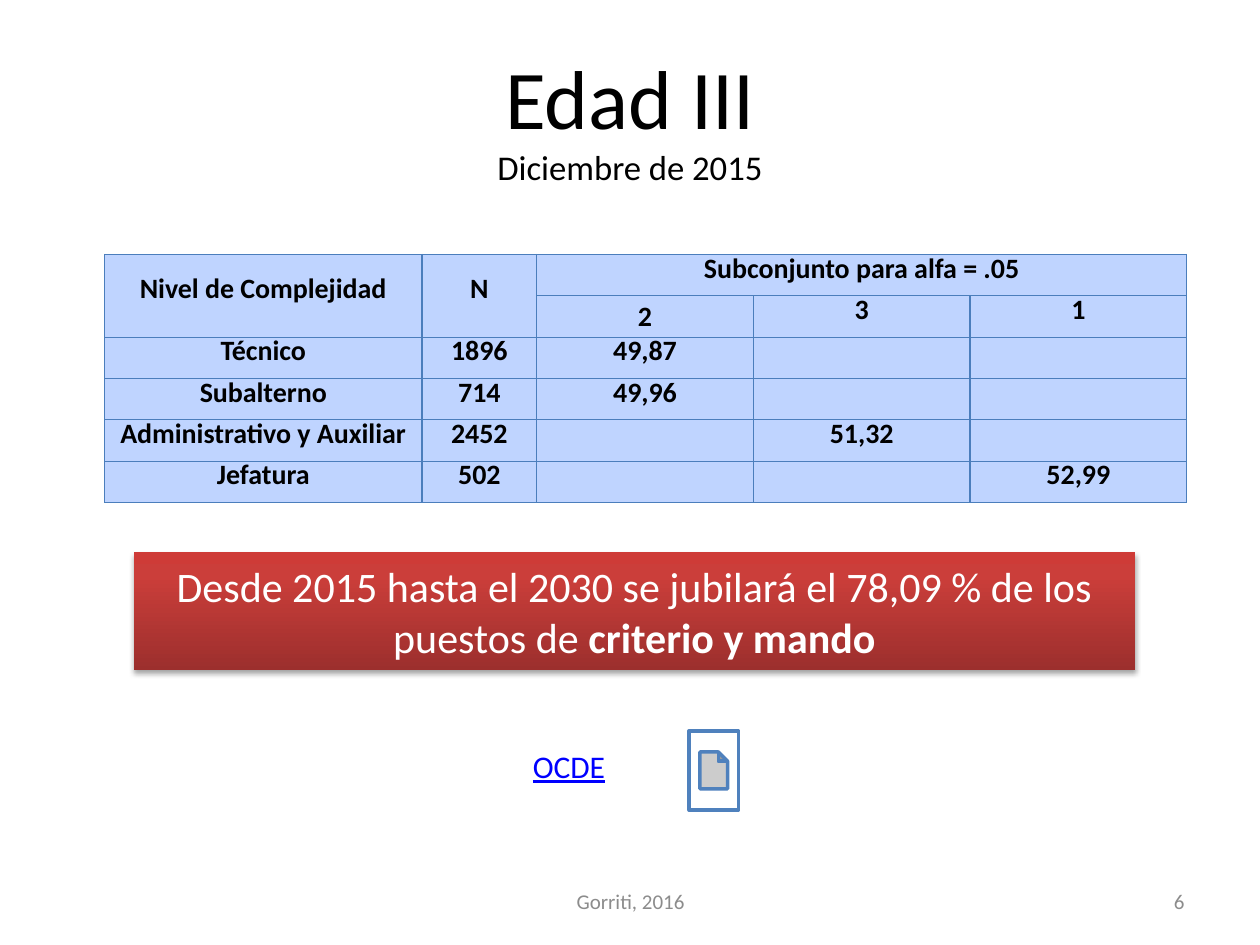
from dataclasses import dataclass

import pptx
import pptx.dml.color
import pptx.enum.shapes
import pptx.enum.text
import pptx.oxml
import pptx.oxml.ns
import pptx.util
from pptx.util import Inches

ALIGN = pptx.enum.text.PP_ALIGN
ANCHOR = pptx.enum.text.MSO_ANCHOR
SHAPE = pptx.enum.shapes.MSO_SHAPE
NS = pptx.oxml.ns.nsdecls("a")

GREY, BLACK, WHITE = "8C8C8C", "000000", "FFFFFF"
CELL_FILL, CELL_BORDER = "BFD4FF", "4B7EBC"


@dataclass
class Box:
    left: float
    top: float
    width: float
    height: float

    def lengths(self) -> tuple:
        return tuple(Inches(v) for v in (self.left, self.top, self.width, self.height))


@dataclass
class Run:
    text: str
    size: float
    color: str = BLACK
    bold: bool = False
    underline: bool = False
    break_after: bool = False


@dataclass
class Label:
    box: Box
    runs: list
    align: object = ALIGN.CENTER
    anchor: object = ANCHOR.MIDDLE


def rgb(value: str) -> pptx.dml.color.RGBColor:
    return pptx.dml.color.RGBColor.from_string(value)


def write_runs(paragraph, runs: list, align) -> None:
    paragraph.alignment = align
    for item in runs:
        run = paragraph.add_run()
        run.text = item.text
        formats = {
            "name": "Calibri",
            "size": pptx.util.Pt(item.size),
            "bold": item.bold,
            "underline": item.underline,
        }
        for attribute, value in formats.items():
            setattr(run.font, attribute, value)
        run.font.color.rgb = rgb(item.color)
        if item.break_after:
            paragraph.add_line_break()


def write_label(shape, label: Label) -> None:
    frame = shape.text_frame
    frame.word_wrap = True
    frame.vertical_anchor = label.anchor
    write_runs(frame.paragraphs[0], label.runs, label.align)


def draw_label(slide, label: Label) -> None:
    write_label(slide.shapes.add_textbox(*label.box.lengths()), label)


def draw_banner(slide, label: Label) -> None:
    banner = slide.shapes.add_shape(SHAPE.RECTANGLE, *label.box.lengths())
    banner.line.fill.background()
    stops = "".join(
        f'<a:gs pos="{position * 1000}"><a:srgbClr val="{color}"/></a:gs>'
        for position, color in ((0, "9C2F2D"), (80, "CB3E3A"), (100, "CE3B37"))
    )
    gradient = pptx.oxml.parse_xml(
        f'<a:gradFill {NS} rotWithShape="1"><a:gsLst>{stops}</a:gsLst>'
        '<a:lin ang="16200000" scaled="0"/></a:gradFill>'
    )
    shadow = pptx.oxml.parse_xml(
        f'<a:effectLst {NS}><a:outerShdw blurRad="40000" dist="23000" dir="5400000" '
        'rotWithShape="0"><a:srgbClr val="000000"><a:alpha val="35000"/></a:srgbClr>'
        "</a:outerShdw></a:effectLst>"
    )
    properties = banner.element.spPr
    properties.find(pptx.oxml.ns.qn("a:prstGeom")).addnext(gradient)
    properties.append(shadow)
    write_label(banner, label)


def style_cell(cell) -> None:
    formats = {
        "margin_left": Inches(0.04),
        "margin_right": Inches(0.04),
        "margin_top": 0,
        "margin_bottom": 0,
        "vertical_anchor": ANCHOR.MIDDLE,
    }
    for attribute, value in formats.items():
        setattr(cell, attribute, value)
    # Borders come before the fill in the cell properties
    for side in ("lnL", "lnR", "lnT", "lnB"):
        cell._tc.get_or_add_tcPr().append(pptx.oxml.parse_xml(
            f'<a:{side} {NS} w="9525"><a:solidFill><a:srgbClr val="{CELL_BORDER}"/>'
            f"</a:solidFill></a:{side}>"
        ))
    cell.fill.solid()
    cell.fill.fore_color.rgb = rgb(CELL_FILL)


def draw_age_table(slide, box: Box, widths: list, rows: list) -> None:
    table = slide.shapes.add_table(len(rows), len(widths), *box.lengths()).table
    for column, width in zip(table.columns, widths):
        column.width = Inches(width)
    for r, row in enumerate(rows):
        for c, text in enumerate(row):
            cell = table.cell(r, c)
            style_cell(cell)
            if text:
                paragraph = cell.text_frame.paragraphs[0]
                write_runs(paragraph, [Run(text, 16, bold=True)], ALIGN.CENTER)
                # The first subset number keeps single spacing
                if (r, c) != (1, 2):
                    paragraph.line_spacing = pptx.util.Pt(12)
    for first, last in (((0, 0), (1, 0)), ((0, 1), (1, 1)), ((0, 2), (0, 4))):
        table.cell(*first).merge(table.cell(*last))


def draw_document_button(slide, box: Box) -> None:
    button = slide.shapes.add_shape(SHAPE.ACTION_BUTTON_DOCUMENT, *box.lengths())
    button.shadow.inherit = False
    button.fill.solid()
    button.fill.fore_color.rgb = rgb(WHITE)
    button.line.color.rgb = rgb("4F81BD")
    button.line.width = pptx.util.Pt(2)


TITLE = Label(Box(0.5, 0.3, 9, 1.25), [
    Run("Edad III", 47.7, break_after=True),
    Run("Diciembre de 2015", 19.8),
])
CONCLUSION = Label(Box(1.06, 4.38, 7.95, 0.94), [
    Run("Desde 2015 hasta el 2030 se jubilará el 78,09 % de los puestos de ", 24, WHITE),
    Run("criterio y mando", 24, WHITE, bold=True),
])
SOURCE = Label(Box(4.13, 5.88, 1.02, 0.4), [Run("OCDE", 18, "0000FF", underline=True)],
               ALIGN.LEFT, ANCHOR.TOP)
FOOTER = Label(Box(3.42, 6.95, 3.17, 0.4), [Run("Gorriti, 2016", 12, GREY)])
PAGE_NUMBER = Label(Box(7.17, 6.95, 2.33, 0.4), [Run("6", 12, GREY)], ALIGN.RIGHT)

AGE_COLUMNS = [2.52, 0.91, 1.72, 1.72, 1.72]
AGE_ROWS = [
    ["Nivel de Complejidad", "N", "Subconjunto para alfa = .05", "", ""],
    ["", "", "2", "3", "1"],
    ["Técnico", "1896", "49,87", "", ""],
    ["Subalterno", "714", "49,96", "", ""],
    ["Administrativo y Auxiliar", "2452", "", "51,32", ""],
    ["Jefatura", "502", "", "", "52,99"],
]


def main() -> None:
    deck = pptx.Presentation()
    deck.slide_width, deck.slide_height = Inches(10), Inches(7.5)
    slide = deck.slides.add_slide(deck.slide_layouts[6])

    # Heading and conclusion
    draw_label(slide, TITLE)
    draw_banner(slide, CONCLUSION)

    # Footer
    for label in (FOOTER, PAGE_NUMBER):
        draw_label(slide, label)

    # Mean ages by complexity level
    draw_age_table(slide, Box(0.83, 2.02, 8.58, 1.97), AGE_COLUMNS, AGE_ROWS)

    # Source reference
    draw_document_button(slide, Box(5.47, 5.8, 0.39, 0.63))
    draw_label(slide, SOURCE)

    deck.save("out.pptx")


if __name__ == "__main__":
    main()
